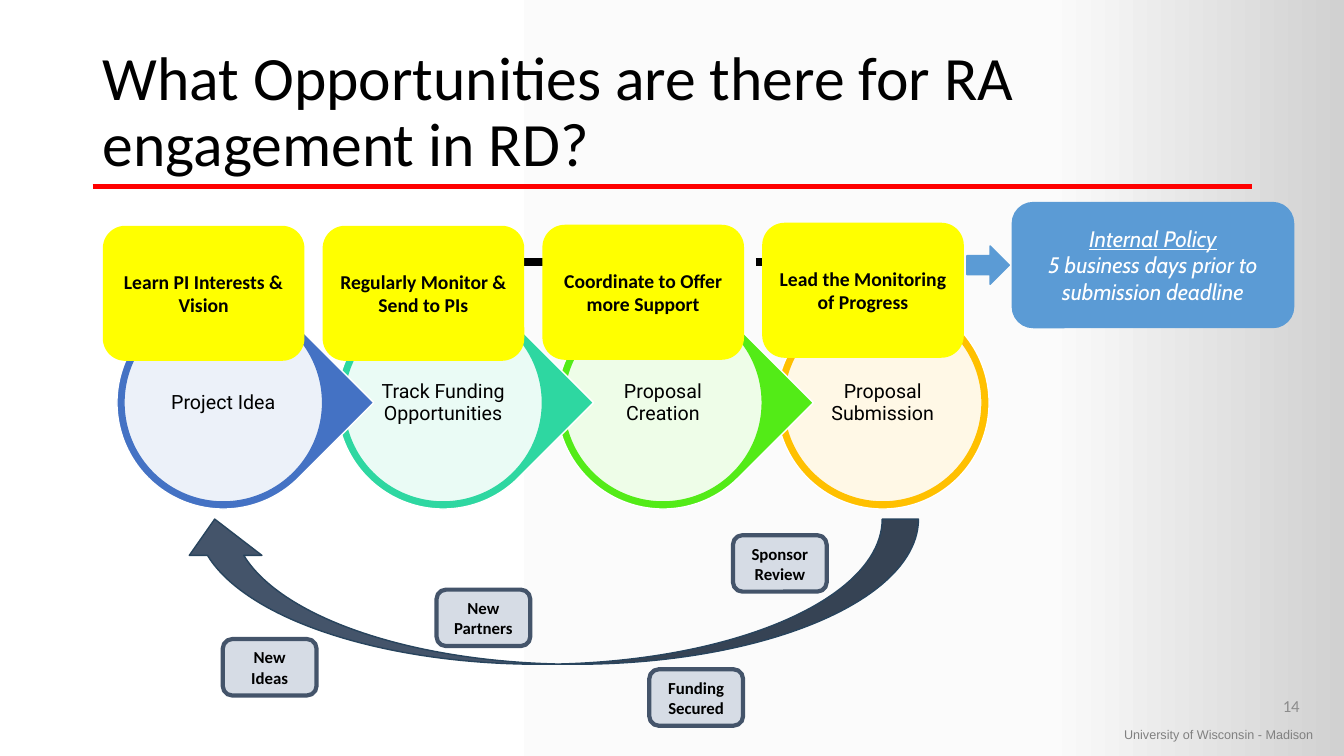
from copy import deepcopy

from pptx import Presentation
from pptx import util as u
from pptx.dml.color import RGBColor
from pptx.enum import dml, shapes, text
from pptx.oxml import ns, xmlchemy

BLACK = RGBColor(0, 0, 0)
WHITE = RGBColor(255, 255, 255)
RED = RGBColor(255, 0, 0)
YELLOW = RGBColor(255, 255, 0)
GRAY = RGBColor(0x80, 0x80, 0x80)
SILVER = RGBColor(0x8C, 0x8C, 0x8C)
SLATE = RGBColor(0x44, 0x54, 0x6A)
NAVY = RGBColor(0x28, 0x44, 0x5D)
PALE = RGBColor(0xD6, 0xDC, 0xE5)
SKY = RGBColor(0x5B, 0x9B, 0xD5)
BLUE = RGBColor(0x44, 0x72, 0xC4)
TEAL = RGBColor(0x2E, 0xD7, 0xA1)
GREEN = RGBColor(0x53, 0xEB, 0x17)
GOLD = RGBColor(0xFF, 0xC0, 0x00)
FADE = [(0, WHITE), (0.78, RGBColor(0xFB, 0xFB, 0xFB)), (1, RGBColor(0xD1, 0xD1, 0xD1))]

FORM = shapes.MSO_SHAPE
ALIGN = text.PP_ALIGN
MIDDLE = text.MSO_ANCHOR.MIDDLE


def write(frame, words, size=14, font="Calibri", color=BLACK, bold=False, italic=False,
          under=(), align=ALIGN.CENTER, anchor=MIDDLE, space=None, inset=None, wrap=True):
    frame.word_wrap = wrap
    frame.auto_size = text.MSO_AUTO_SIZE.NONE
    frame.vertical_anchor = anchor
    if inset is not None:
        frame.margin_left = frame.margin_right = u.Inches(inset)
        frame.margin_top = frame.margin_bottom = u.Inches(inset)
    for i, line in enumerate(words.split("\n")):
        para = frame.paragraphs[0] if i == 0 else frame.add_paragraph()
        para.alignment = align
        if space:
            para.line_spacing = space
        run = para.add_run()
        run.text = line
        run.font.size = u.Pt(size)
        run.font.name = font
        run.font.color.rgb = color
        run.font.bold = bold
        run.font.italic = italic
        run.font.underline = i in under


class Deck:
    font = "Calibri"

    def __init__(self):
        self.show = Presentation()
        self.show.slide_width = u.Inches(13.33)
        self.show.slide_height = u.Inches(7.5)
        self.slide = self.show.slides.add_slide(self.show.slide_layouts[5])

    def place(self, box):
        return [u.Inches(n) for n in box]

    def fade(self, marks):
        fill = self.slide.background.fill
        fill.gradient()
        fill.gradient_angle = 0
        stops = next(self.slide.element.iter(ns.qn("a:gsLst")))
        stops.append(deepcopy(stops[-1]))
        for stop, (spot, color) in zip(fill.gradient_stops, marks):
            stop.color.rgb = color
            stop.position = spot

    def title(self, box, words, **style):
        head = self.slide.shapes.title
        head.left, head.top, head.width, head.height = self.place(box)
        write(head.text_frame, words, font=self.font, **style)

    def label(self, box, words, **style):
        item = self.slide.shapes.add_textbox(*self.place(box))
        write(item.text_frame, words, **style)

    def shape(self, form, box, fill, edge=None, width=1, words=None, clear=None, **style):
        item = self.slide.shapes.add_shape(form, *self.place(box))
        item.shadow.inherit = False
        item.fill.solid()
        item.fill.fore_color.rgb = fill
        if clear:
            tint = next(item.element.spPr.iter(ns.qn("a:srgbClr")))
            alpha = xmlchemy.OxmlElement("a:alpha")
            alpha.set("val", str(clear * 1000))
            tint.append(alpha)
        if edge is None:
            item.line.fill.background()
        else:
            item.line.color.rgb = edge
            item.line.width = u.Pt(width)
        if words:
            write(item.text_frame, words, **style)
        return item

    def rule(self, ends, color, width, dash=None):
        item = self.slide.shapes.add_connector(shapes.MSO_CONNECTOR.STRAIGHT, *self.place(ends))
        item.line.color.rgb = color
        item.line.width = u.Pt(width)
        if dash:
            item.line.dash_style = dash
        item.element.spPr.append(xmlchemy.OxmlElement("a:effectLst"))

    def stage(self, left, color, words, last):
        drop = self.shape(FORM.OVAL if last else FORM.TEAR, (left, 2.94, 2.11, 2.11), color, WHITE)
        if not last:
            drop.rotation = 45
        self.shape(FORM.OVAL, (left + 0.07, 3.01, 1.97, 1.97), WHITE, color, clear=90)
        self.label((left + 0.35, 3.3, 1.41, 1.4), words, font="Roboto", space=0.9, inset=0.02)


def main():
    deck = Deck()
    deck.fade(FADE)
    deck.label((11.05, 7.16, 2.28, 0.25), "University of Wisconsin - Madison", size=9, font="Arial",
               color=GRAY, align=ALIGN.LEFT, anchor=text.MSO_ANCHOR.TOP, wrap=False)
    deck.rule((0.92, 1.85, 12.42, 1.85), RED, 3)
    deck.title((0.92, 0.4, 11.5, 1.45), "What Opportunities are there for RA engagement in RD?",
               size=44, align=ALIGN.LEFT, space=0.9)
    deck.label((9.99, 6.8, 3, 0.4), "14", size=12, color=SILVER, align=ALIGN.RIGHT)

    deck.shape(FORM.CURVED_UP_ARROW, (1.77, 5.15, 7.34, 1.44), SLATE, NAVY
               ).element.spPr.xfrm.set("flipH", "1")
    events = [(7.27, 5.31, "Sponsor Review"), (6.44, 6.64, "Funding Secured"),
              (2.21, 6.34, "New Ideas"), (4.33, 5.85, "New Partners")]
    for left, top, words in events:
        deck.shape(FORM.ROUNDED_RECTANGLE, (left, top, 0.93, 0.56), PALE, SLATE, 3, words,
                   size=12, bold=True)

    steps = [(BLUE, "Project Idea", 2.24, "Learn PI Interests & Vision"),
             (TEAL, "Track Funding Opportunities", 2.24, "Regularly Monitor & Send to PIs"),
             (GREEN, "Proposal Creation", 2.23, "Coordinate to Offer more Support"),
             (GOLD, "Proposal Submission", 2.21, "Lead the Monitoring of Progress")]
    pitch = 2.18
    final = len(steps) - 1
    for i in range(final, -1, -1):
        color, words = steps[i][:2]
        deck.stage(1.16 + pitch * i, color, words, i == final)

    deck.rule((5.16, 2.6, 7.98, 2.6), BLACK, 6, dml.MSO_LINE.DASH)
    deck.shape(FORM.RIGHT_ARROW, (9.59, 2.44, 0.42, 0.38), SKY, SKY)
    deck.shape(FORM.ROUNDED_RECTANGLE, (10.04, 2.01, 2.79, 1.24), SKY, SKY,
               words="Internal Policy\n5 business days prior to submission deadline",
               size=16, font="Cabin", color=WHITE, italic=True, under=(0,))
    for i, (_, _, top, words) in enumerate(steps):
        deck.shape(FORM.ROUNDED_RECTANGLE, (1.02 + pitch * i, top, 2, 1.34), YELLOW,
                   words=words, bold=True)
    deck.show.save("out.pptx")


if __name__ == "__main__":
    main()
